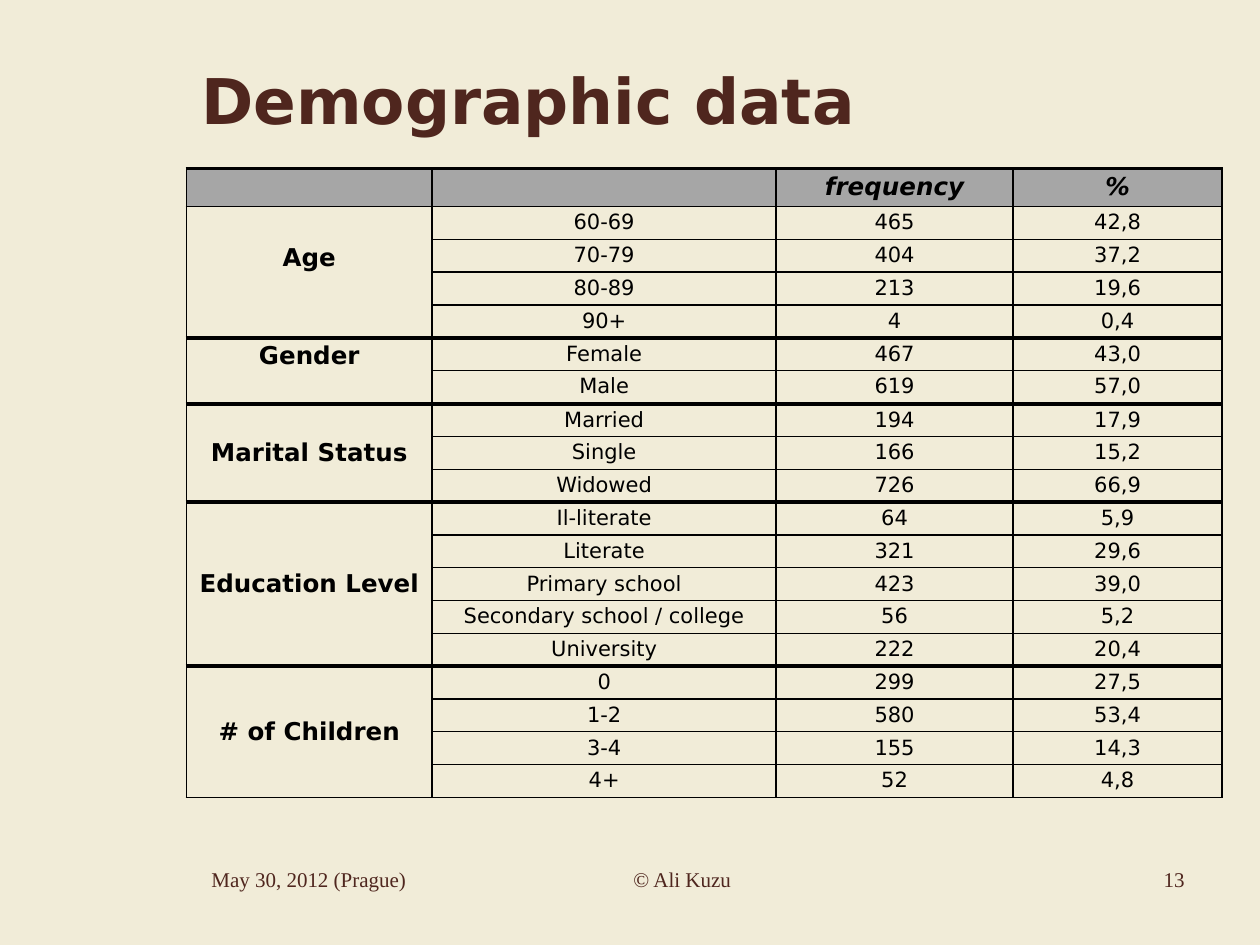
from lxml import etree
from pptx import Presentation
from pptx import util as u
from pptx.dml.color import RGBColor
from pptx.enum import text as t
from pptx.oxml import ns

BROWN, BLACK = "4F261E", "000000"
SANS, SERIF = "DejaVu Sans", "Times New Roman"
LEFT, MID, RIGHT = t.PP_ALIGN.LEFT, t.PP_ALIGN.CENTER, t.PP_ALIGN.RIGHT
rgb = RGBColor.from_string


def style(frame, words, size, face, color, align, bold=False, slant=False):
    frame.text = words
    para = frame.paragraphs[0]
    para.alignment = align
    font = para.font
    font.size, font.name, font.color.rgb = u.Pt(size), face, rgb(color)
    font.bold, font.italic = bold, slant


def border(cell, top, base):
    props = cell._tc.get_or_add_tcPr()
    for side, width in (("L", 1), ("R", 1), ("T", top), ("B", base)):
        line = etree.SubElement(props, ns.qn(f"a:ln{side}"), w=str(u.Pt(width)))
        fill = etree.SubElement(line, ns.qn("a:solidFill"))
        etree.SubElement(fill, ns.qn("a:srgbClr"), val=BLACK)


deck = Presentation()
deck.slide_width, deck.slide_height = u.Inches(10), u.Inches(7.5)
slide = deck.slides.add_slide(deck.slide_layouts[6])
slide.background.fill.solid()
slide.background.fill.fore_color.rgb = rgb("F1ECD8")

# Title and footer
labels = [
    ("Demographic data", (1.5, 0.32, 8, 0.93), 36, SANS, LEFT),
    ("May 30, 2012 (Prague)", (1.58, 6.83, 2.08, 0.52), 12, SERIF, LEFT),
    ("© Ali Kuzu", (3.83, 6.83, 3.17, 0.52), 12, SERIF, MID),
    ("13", (7.17, 6.83, 2.33, 0.52), 12, SERIF, RIGHT),
]
for words, spot, size, face, align in labels:
    frame = slide.shapes.add_textbox(*map(u.Inches, spot)).text_frame
    frame.word_wrap = True
    title = size == 36
    frame.vertical_anchor = t.MSO_ANCHOR.MIDDLE if title else t.MSO_ANCHOR.TOP
    style(frame, words, size, face, BROWN, align, bold=title)

# Table data
groups = {
    "Age": [("60-69", "465", "42,8"), ("70-79", "404", "37,2"),
            ("80-89", "213", "19,6"), ("90+", "4", "0,4")],
    "Gender": [("Female", "467", "43,0"), ("Male", "619", "57,0")],
    "Marital Status": [("Married", "194", "17,9"), ("Single", "166", "15,2"),
                       ("Widowed", "726", "66,9")],
    "Education Level": [("Il-literate", "64", "5,9"), ("Literate", "321", "29,6"),
                        ("Primary school", "423", "39,0"),
                        ("Secondary school / college", "56", "5,2"),
                        ("University", "222", "20,4")],
    "# of Children": [("0", "299", "27,5"), ("1-2", "580", "53,4"),
                      ("3-4", "155", "14,3"), ("4+", "52", "4,8")],
}
count = 1 + sum(map(len, groups.values()))

# Table grid
table = slide.shapes.add_table(count, 4, u.Inches(1.48), u.Inches(1.34),
                               u.Inches(8.22), u.Inches(4.98)).table
table.first_row = table.horz_banding = False
for col, width in zip(table.columns, (1.95, 2.73, 1.88, 1.66)):
    col.width = u.Inches(width)
for i, row in enumerate(table.rows):
    row.height = u.Inches(0.26 if i else 0.3)
for cell in table.iter_cells():
    cell.margin_left = cell.margin_right = u.Inches(0.06)
    cell.margin_top = cell.margin_bottom = u.Inches(0.03)

# Header row
for cell, words in zip(table.rows[0].cells, ("", "", "frequency", "%")):
    border(cell, 2, 1)
    cell.fill.solid()
    cell.fill.fore_color.rgb = rgb("A6A6A6")
    style(cell.text_frame, words, 14, SANS, BLACK, MID, bold=True, slant=True)

# Groups, parted by thick lines
first = 1
for name, rows in groups.items():
    last = first + len(rows) - 1
    for r, values in enumerate(rows, first):
        top = 2.25 if r == first > 1 else 1
        base = 2.25 if r == last < count - 1 else 1
        for c, words in enumerate(("", *values)):
            cell = table.cell(r, c)
            border(cell, top, base)
            cell.fill.background()
            style(cell.text_frame, words, 12, SANS, BLACK, MID)
    head = table.cell(first, 0)
    head.merge(table.cell(last, 0))
    head.vertical_anchor = t.MSO_ANCHOR.MIDDLE
    if name in ("Age", "Gender"):  # these two sit a little higher
        head.margin_bottom = u.Inches(0.26)
    style(head.text_frame, name, 14, SANS, BLACK, MID, bold=True)
    # The merged cell takes its lower line from its last row
    edge = head._tc.tcPr.find(ns.qn("a:lnB"))
    edge.set("w", str(u.Pt(2.25 if last < count - 1 else 1)))
    first = last + 1

deck.save("out.pptx")
